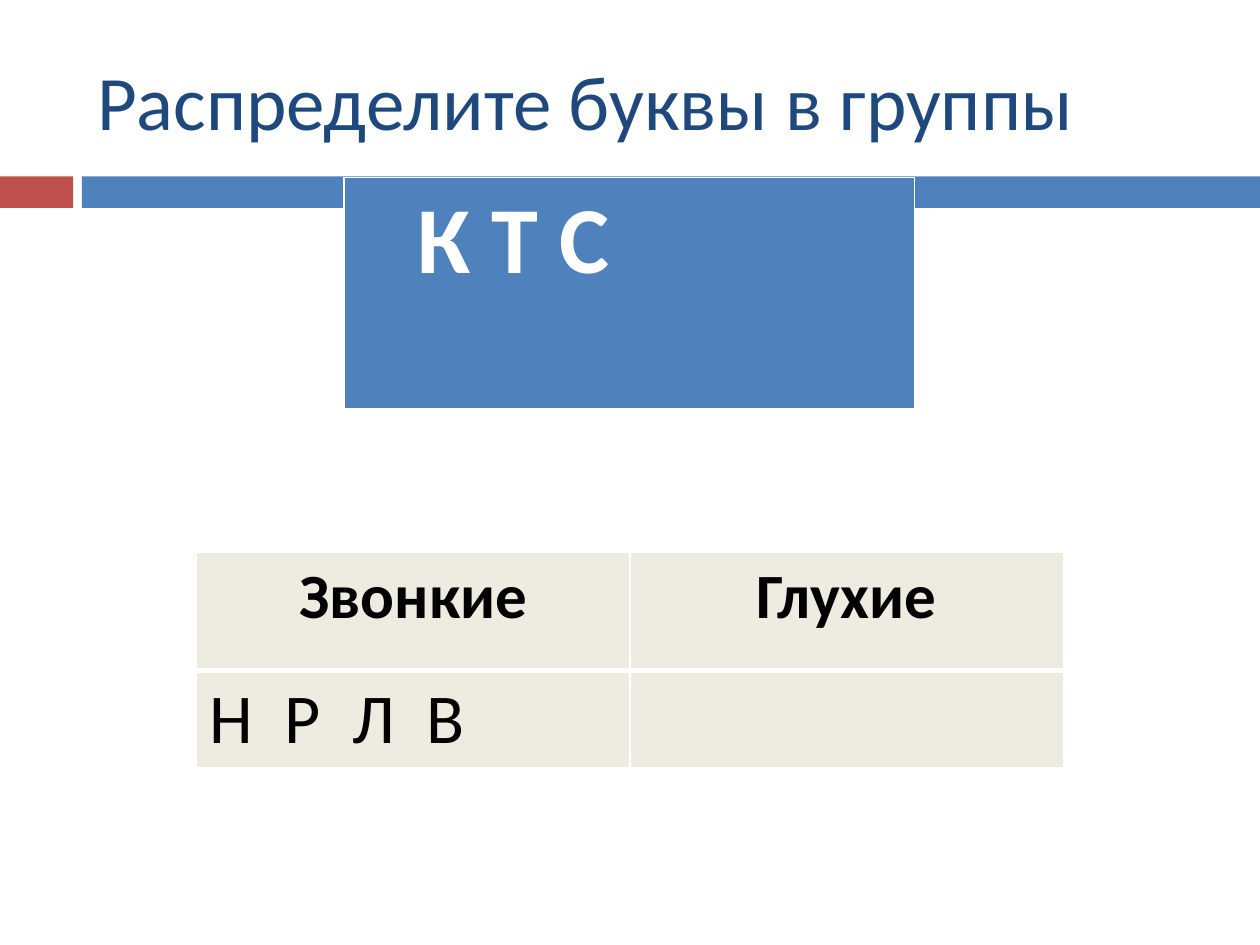
from lxml.etree import SubElement
from pptx import Presentation
from pptx.dml.color import RGBColor
from pptx.enum.shapes import MSO_SHAPE
from pptx.enum.text import MSO_ANCHOR, MSO_AUTO_SIZE, PP_ALIGN
from pptx.oxml.ns import qn
from pptx.util import Inches, Pt

WHITE = RGBColor(0xFF, 0xFF, 0xFF)
BLACK = RGBColor(0x00, 0x00, 0x00)
NAVY = RGBColor(0x1F, 0x49, 0x7D)
BLUE = RGBColor(0x4F, 0x81, 0xBD)
RED = RGBColor(0xC0, 0x50, 0x4D)
CREAM = RGBColor(0xEE, 0xEC, 0xE1)


class LessonSlide:
    font_name = "Calibri"
    columns = 10
    rows = 7.5

    def __init__(self, presentation):
        self.column = presentation.slide_width / self.columns
        self.row = presentation.slide_height / self.rows
        self.slide = presentation.slides.add_slide(presentation.slide_layouts[5])

    def place(self, left, top, width, height):
        return (int(left * self.column), int(top * self.row),
                int(width * self.column), int(height * self.row))

    def style(self, paragraph, size, color, bold=False, alignment=PP_ALIGN.LEFT):
        paragraph.alignment = alignment
        font = paragraph.font
        font.name, font.size, font.bold = self.font_name, Pt(size), bold
        font.color.rgb = color

    def bar(self, area, color):
        shape = self.slide.shapes.add_shape(MSO_SHAPE.RECTANGLE, *self.place(*area))
        shape.shadow.inherit = False
        shape.fill.solid()
        shape.fill.fore_color.rgb = color
        shape.line.fill.background()

    def title(self, text, area):
        shape = self.slide.shapes.title
        shape.left, shape.top, shape.width, shape.height = self.place(*area)
        frame = shape.text_frame
        frame.text = text
        frame.auto_size = MSO_AUTO_SIZE.NONE
        frame.vertical_anchor = MSO_ANCHOR.MIDDLE
        self.style(frame.paragraphs[0], 44, NAVY)

    def table(self, texts, area, heights):
        frame = self.slide.shapes.add_table(len(texts), len(texts[0]), *self.place(*area))
        for table_row, height in zip(frame.table.rows, heights):
            table_row.height = int(height * self.row)
        return frame.table

    def cell(self, cell, text, fill, top_border=1, bottom_border=3, **style):
        properties = cell._tc.get_or_add_tcPr()
        borders = {"L": 1, "R": 1, "T": top_border, "B": bottom_border}
        for side, width in borders.items():
            line = SubElement(properties, qn(f"a:ln{side}"), w=str(Pt(width)))
            solid = SubElement(line, qn("a:solidFill"))
            SubElement(solid, qn("a:srgbClr"), val=str(WHITE))
        cell.fill.solid()
        cell.fill.fore_color.rgb = fill
        cell.text = text
        self.style(cell.text_frame.paragraphs[0], **style)

    def letter_box(self, text, area):
        table = self.table([[text]], area, [area[3]])
        cell = table.cell(0, 0)
        self.cell(cell, text, BLUE, size=54, color=WHITE, bold=True)
        cell.margin_left = Inches(0.58)

    def group_table(self, texts, area, heights):
        table = self.table(texts, area, heights)
        header, letters = texts
        for index, text in enumerate(header):
            self.cell(table.cell(0, index), text, CREAM, size=36, color=BLACK,
                      bold=True, alignment=PP_ALIGN.CENTER)
        for index, text in enumerate(letters):
            self.cell(table.cell(1, index), text, CREAM, top_border=3,
                      bottom_border=1, size=40, color=BLACK)


def main():
    presentation = Presentation()
    presentation.slide_width = Inches(10)
    presentation.slide_height = Inches(7.5)
    lesson = LessonSlide(presentation)
    lesson.bar((0, 1.4, 0.58, 0.25), RED)
    lesson.bar((0.65, 1.4, 9.35, 0.25), BLUE)
    lesson.title("Распределите буквы в группы", (0.67, 0.25, 8.92, 1.08))
    lesson.letter_box("К Т С", (2.73, 1.41, 4.53, 1.85))
    lesson.group_table([["Звонкие", "Глухие"], ["Н  Р  Л  В", ""]],
                       (1.56, 4.38, 6.88, 1.71), [0.94, 0.77])
    presentation.save("out.pptx")


if __name__ == "__main__":
    main()
